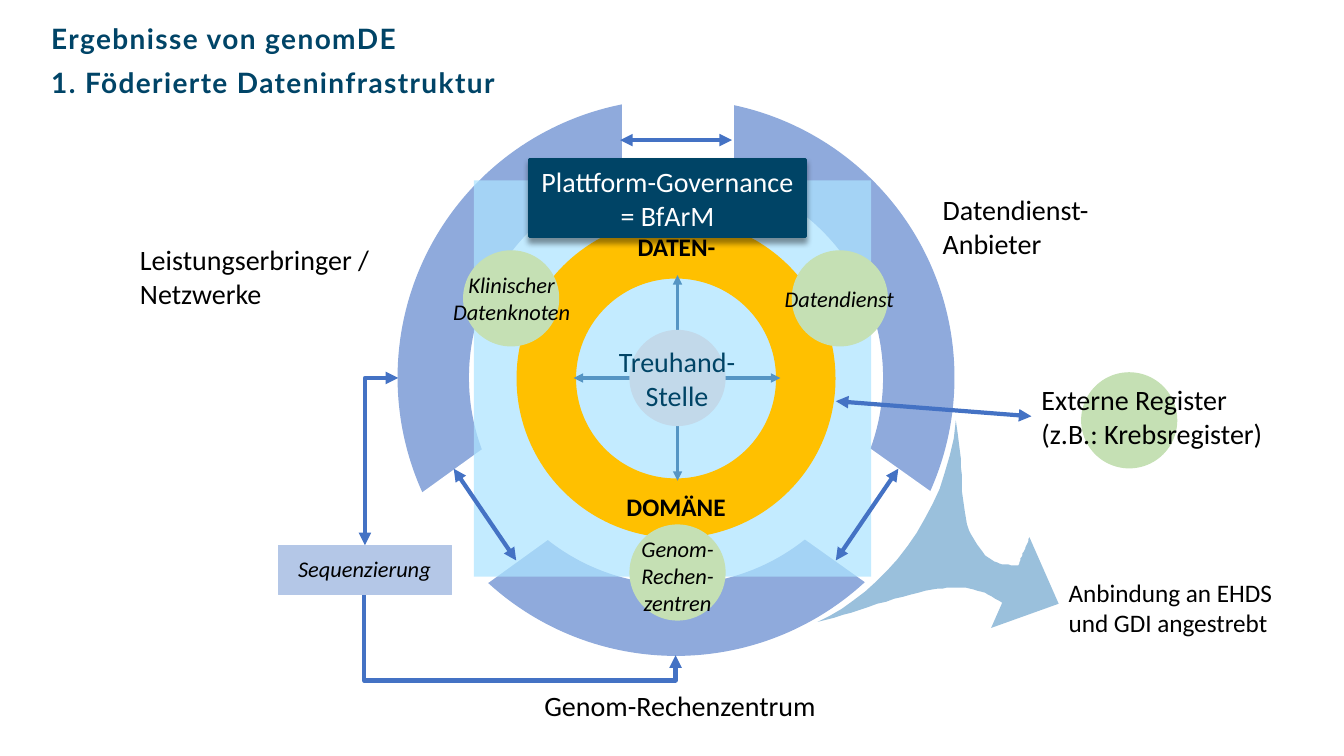
import pptx
import pptx.dml.color
import pptx.enum.shapes
import pptx.enum.text
import pptx.oxml
import pptx.oxml.ns
import pptx.util

SHAPE = pptx.enum.shapes.MSO_SHAPE
CONNECTOR = pptx.enum.shapes.MSO_CONNECTOR
LEFT, CENTER, RIGHT = (pptx.enum.text.PP_ALIGN.LEFT, pptx.enum.text.PP_ALIGN.CENTER,
                       pptx.enum.text.PP_ALIGN.RIGHT)
EMU_PER_PX = 9144  # 100 px to the inch

BLACK, WHITE = "000000", "FFFFFF"
NAVY, TITLE_BLUE = "004466", "004467"
RING_BLUE, ARROW_BLUE, HUB_BLUE = "8FAADC", "4472C4", "5595C4"
GREEN, YELLOW = "C5E0B4", "FFC000"


def px(length):
    return pptx.util.Emu(round(length * EMU_PER_PX))


def color(value):
    return pptx.dml.color.RGBColor.from_string(value)


def add_xml(parent, tag, **attributes):
    element = parent.makeelement(pptx.oxml.ns.qn(tag), attributes)
    parent.append(element)
    return element


def curve(start, control1, control2, end, steps=16):
    """Points along a cubic Bezier curve, without its start."""
    points = []
    for step in range(1, steps + 1):
        t = step / steps
        weights = ((1 - t) ** 3, 3 * t * (1 - t) ** 2, 3 * t * t * (1 - t), t ** 3)
        corners = (start, control1, control2, end)
        points.append(tuple(sum(w * corner[axis] for w, corner in zip(weights, corners))
                            for axis in (0, 1)))
    return points


class Diagram:
    def __init__(self, slide, font="Calibri"):
        self.shapes = slide.shapes
        self.font = font

    def paint(self, shape, fill, line=None, width=1):
        shape.shadow.inherit = False
        shape.fill.solid()
        shape.fill.fore_color.rgb = color(fill)
        if line:
            shape.line.color.rgb = color(line)
            shape.line.width = pptx.util.Pt(width)
        else:
            shape.line.fill.background()

    def shape(self, kind, left, top, width, height, fill, line=None, line_width=1, hole=None):
        shape = self.shapes.add_shape(kind, px(left), px(top), px(width), px(height))
        self.paint(shape, fill, line, line_width)
        if hole is not None:
            shape.adjustments[0] = hole
        return shape

    def circle(self, left, top, fill=GREEN):
        return self.shape(SHAPE.OVAL, left, top, 94, 94, fill, fill)

    def ring(self, left, top, size, fill, thickness):
        return self.shape(SHAPE.DONUT, left, top, size, size, fill, fill, hole=thickness)

    def set_text(self, frame, text, size, ink=BLACK, align=LEFT, wrap=False,
                 bold=None, italic=None, font=None):
        frame.word_wrap = wrap
        frame.auto_size = pptx.enum.text.MSO_AUTO_SIZE.SHAPE_TO_FIT_TEXT
        frame.text = text
        for para in frame.paragraphs:
            para.alignment = align
            para.font.name = font or self.font
            para.font.size = pptx.util.Pt(size)
            para.font.color.rgb = color(ink)
            para.font.bold = bold
            para.font.italic = italic

    def text(self, left, top, width, height, text, size=20, **style):
        box = self.shapes.add_textbox(px(left), px(top), px(width), px(height))
        self.set_text(box.text_frame, text, size, **style)
        return box.text_frame

    def node_label(self, left, top, width, height, text):
        return self.text(left, top, width, height, text, 16,
                         align=CENTER, wrap=True, italic=True)

    def line(self, start, end, ink=ARROW_BLUE, width=3, head=True, tail=True,
             kind=CONNECTOR.STRAIGHT):
        line = self.shapes.add_connector(kind, *map(px, start + end))
        line.line.color.rgb = color(ink)
        line.line.width = pptx.util.Pt(width)
        outline = line.line._get_or_add_ln()
        for tag, wanted in (("a:headEnd", head), ("a:tailEnd", tail)):
            if wanted:
                add_xml(outline, tag, type="triangle")
        add_xml(line._element.spPr, "a:effectLst")
        return line

    def elbow(self, start, end, preset, turn=0, bend=None, **style):
        """Bent connector; start and end are given before the turn in degrees."""
        line = self.line(start, end, kind=CONNECTOR.ELBOW, **style)
        properties = line._element.spPr
        geometry = properties.find(pptx.oxml.ns.qn("a:prstGeom"))
        geometry.set("prst", preset)
        if turn:
            properties.find(pptx.oxml.ns.qn("a:xfrm")).set("rot", str(turn * 60000))
        if bend is not None:
            guides = geometry.find(pptx.oxml.ns.qn("a:avLst"))
            if guides is None:
                guides = add_xml(geometry, "a:avLst")
            add_xml(guides, "a:gd", name="adj1", fmla=f"val {round(bend * 100000)}")
        return line

    def outline(self, points, fill):
        builder = self.shapes.build_freeform(*points[0], scale=EMU_PER_PX)
        builder.add_line_segments(points[1:], close=True)
        shape = builder.convert_to_shape()
        self.paint(shape, fill)
        return shape

    def fade(self, shape, percent):
        fill = shape._element.spPr.find(pptx.oxml.ns.qn("a:solidFill"))
        add_xml(fill[0], "a:alpha", val=str(percent * 1000))

    def drop_shadow(self, shape):
        effects = shape._element.spPr.find(pptx.oxml.ns.qn("a:effectLst"))
        shadow = add_xml(effects, "a:outerShdw", blurRad=str(pptx.util.Pt(4)),
                         dist=str(pptx.util.Pt(3)), dir="5400000", algn="t", rotWithShape="0")
        add_xml(add_xml(shadow, "a:srgbClr", val=BLACK), "a:alpha", val="40000")


def draw_outer_ring(diagram):
    diagram.circle(1073, 370)
    diagram.ring(395, 99, 551, RING_BLUE, 0.126)
    for start, end in (((671, 375), (398, 572)), ((672, 375), (672, 76)),
                       ((669, 375), (946, 572))):
        diagram.line(start, end, WHITE, 80, head=False, tail=False)
    diagram.text(522, 678, 297, 44, "Genom-Rechenzentrum", align=RIGHT)
    diagram.text(925, 186, 171, 77, "Datendienst-\nAnbieter")
    diagram.line((615, 139), (726, 139))
    diagram.elbow((395, 375), (362, 541), "bentConnector2")
    diagram.elbow((546, 465), (485, 774), "bentConnector3", turn=270, bend=1.41, head=False)


def draw_data_domain(diagram):
    diagram.fade(diagram.shape(SHAPE.RECTANGLE, 470, 179, 394, 393, "ADE4FF"), 72)
    diagram.ring(513, 218, 315, YELLOW, 0.183)
    diagram.text(622, 225, 98, 40, "DATEN-", 18, align=CENTER, bold=True)
    diagram.text(611, 483, 119, 40, "DOMÄNE", 18, align=CENTER, bold=True)
    for left, top in ((460, 249), (786, 249), (625, 521)):
        diagram.circle(left, top)
    diagram.node_label(431, 264, 153, 64, "Klinischer\nDatenknoten")
    diagram.node_label(749, 278, 167, 37, "Datendienst")
    diagram.line((450, 465), (512, 556))
    diagram.line((891, 465), (829, 556))
    diagram.shape(SHAPE.RECTANGLE, 276, 541, 172, 49, "B4C7E7", "B4C7E7")
    diagram.node_label(278, 546, 167, 37, "Sequenzierung")


def draw_hub(diagram):
    diagram.line((672, 477), (672, 273), HUB_BLUE, 2.25)
    diagram.line((569, 375), (774, 375), HUB_BLUE, 2.25)
    diagram.circle(625, 328, "C2D9EA")
    diagram.text(602, 337, 139, 77, "Treuhand-\nStelle", ink=NAVY, align=CENTER)
    governance = diagram.shape(SHAPE.RECTANGLE, 525, 158, 274, 77, NAVY, NAVY, 2.25)
    diagram.drop_shadow(governance)
    diagram.set_text(governance.text_frame, "Plattform-Governance\v= BfArM", 20, WHITE, CENTER)


def draw_surroundings(diagram):
    diagram.text(129, 236, 257, 77, "Leistungserbringer /\vNetzwerke")
    diagram.node_label(623, 526, 98, 91, "Genom-\vRechen-zentren")
    diagram.text(1023, 375, 252, 77, "Externe Register\n(z.B.: Krebsregister)")
    diagram.line((1023, 413), (829, 398))
    diagram.text(1050, 568, 252, 71, "Anbindung an EHDS und GDI angestrebt", 18, wrap=True)


def draw_title(diagram):
    frame = diagram.text(41, 20, 1057, 85,
                         "Ergebnisse von genomDE\n1. Föderierte Dateninfrastruktur",
                         ink=TITLE_BLUE, wrap=True, bold=True, font="Lato")
    for para in frame.paragraphs:
        para.line_spacing = 0.9
        para._p.pPr.find(pptx.oxml.ns.qn("a:defRPr")).set("spc", "100")
    frame.paragraphs[1].space_before = pptx.util.Pt(10)


def draw_outlook_arrow(diagram):
    tip = (948, 417)
    points = [tip]
    points += curve(tip, (939, 513), (874, 588), (811, 617))
    points += curve(points[-1], (852, 607), (910, 584), (935, 584))
    points += curve(points[-1], (956, 580), (976, 585), (994, 598))
    points += [(983, 623), (1050, 599), (1021, 533)]
    points += curve(points[-1], (1017, 544), (1013, 552), (1010, 561))
    points += curve(points[-1], (992, 560), (979, 561), (963, 530))
    points += curve(points[-1], (951, 508), (956, 453), tip)
    diagram.outline(points, "9AC0DC")


def main():
    deck = pptx.Presentation()
    deck.slide_width, deck.slide_height = px(1333), px(750)
    diagram = Diagram(deck.slides.add_slide(deck.slide_layouts[6]))
    for draw in (draw_outer_ring, draw_data_domain, draw_hub, draw_surroundings,
                 draw_title, draw_outlook_arrow):
        draw(diagram)
    deck.save("out.pptx")


if __name__ == "__main__":
    main()
